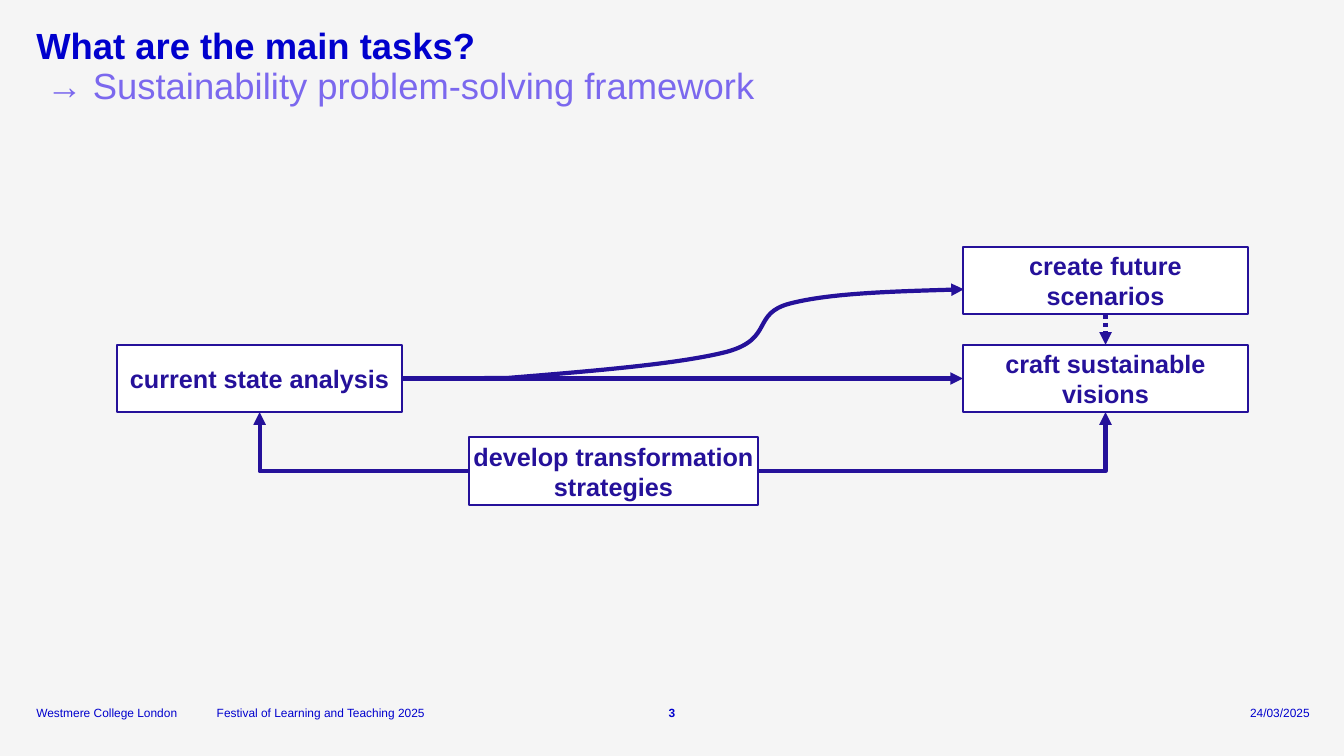
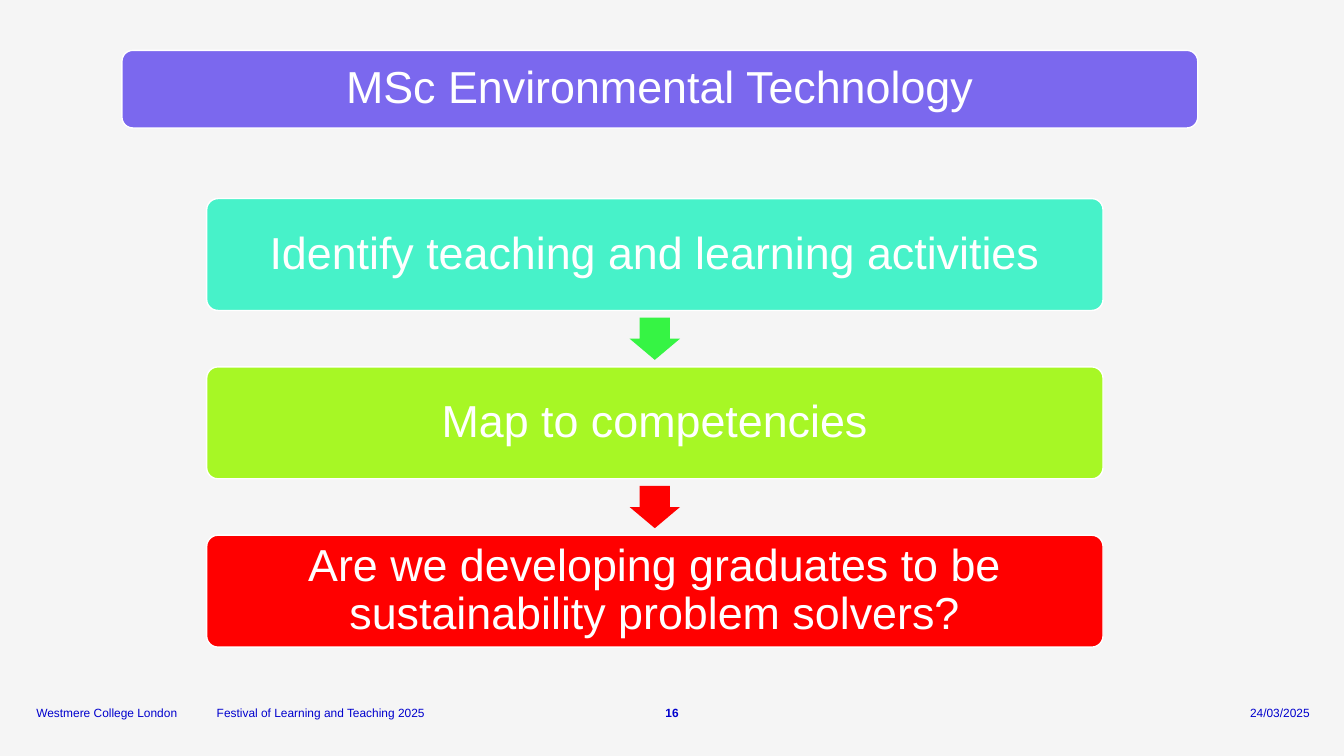
"""Build two slides on a sustainability problem-solving framework and a degree review."""
from dataclasses import dataclass
from typing import Optional

from lxml.etree import SubElement
from pptx import Presentation
from pptx.dml.color import RGBColor
from pptx.enum.dml import MSO_LINE
from pptx.enum.shapes import MSO_CONNECTOR, MSO_SHAPE
from pptx.enum.text import MSO_ANCHOR, PP_ALIGN
from pptx.oxml.ns import qn
from pptx.shapes.autoshape import Shape
from pptx.shapes.connector import Connector
from pptx.slide import Slide
from pptx.text.text import TextFrame
from pptx.util import Inches, Pt


@dataclass(frozen=True)
class Theme:
    font: str = "Arial"
    background: str = "F5F5F5"
    blue: str = "0000CD"
    violet: str = "7B68EE"
    indigo: str = "25119A"
    white: str = "FFFFFF"
    turquoise: str = "47F2C9"
    green: str = "36F444"
    lime: str = "A7F725"
    red: str = "FF0000"
    footer_size: float = 8.5
    title_size: float = 26
    task_size: float = 18
    step_size: float = 32
    task_border: float = 1.5
    step_border: float = 1
    flow_width: float = 3


@dataclass(frozen=True)
class Area:
    left: float
    top: float
    width: float
    height: float

    def lengths(self) -> tuple[int, int, int, int]:
        return Inches(self.left), Inches(self.top), Inches(self.width), Inches(self.height)


@dataclass(frozen=True)
class TextStyle:
    size: float
    color: str
    bold: bool = False
    align: PP_ALIGN = PP_ALIGN.LEFT
    anchor: MSO_ANCHOR = MSO_ANCHOR.TOP
    inset: float = 0
    line_spacing: float = 1


@dataclass(frozen=True)
class Task:
    key: str
    text: str
    area: Area


@dataclass(frozen=True)
class Step:
    text: str
    fill: str
    arrow_fill: Optional[str] = None


THEME = Theme()
TOP, LEFT, BOTTOM, RIGHT = range(4)

TASK_STYLE = TextStyle(THEME.task_size, THEME.indigo, True, PP_ALIGN.CENTER, MSO_ANCHOR.MIDDLE, 0.04)
STEP_STYLE = TextStyle(THEME.step_size, THEME.white, False, PP_ALIGN.CENTER, MSO_ANCHOR.MIDDLE, 0.17, 0.9)

TASKS = (
    Task("analysis", "current state analysis", Area(1.16, 3.42, 2.83, 0.67)),
    Task("scenarios", "create future scenarios", Area(9.55, 2.45, 2.83, 0.67)),
    Task("visions", "craft sustainable visions", Area(9.55, 3.42, 2.83, 0.67)),
    Task("strategies", "develop transformation strategies", Area(4.65, 4.34, 2.87, 0.67)),
)

BRANCH_START = (5.03, 3.75)
BRANCH_CURVES = (
    (5.89, 3.68), (6.74, 3.61), (7.21, 3.49),
    (7.68, 3.36), (7.45, 3.11), (7.84, 3.01),
    (8.23, 2.91), (8.89, 2.89), (9.56, 2.87),
)

STEPS = (
    Step("Identify teaching and learning activities", THEME.turquoise, THEME.green),
    Step("Map to competencies", THEME.lime, THEME.red),
    Step("Are we developing graduates to be sustainability problem solvers?", THEME.red),
)
FIRST_STEP = Area(2.05, 1.97, 8.89, 1.11)
STEP_PITCH = 1.67
ARROW_WIDTH, ARROW_HEIGHT = 0.5, 0.42


def rgb(color: str) -> RGBColor:
    return RGBColor.from_string(color)


def write(frame: TextFrame, text: str, style: TextStyle) -> None:
    frame.text = text
    frame.word_wrap = True
    frame.vertical_anchor = style.anchor
    frame.margin_left = frame.margin_right = Inches(style.inset)
    frame.margin_top = frame.margin_bottom = Inches(style.inset)
    paragraph = frame.paragraphs[0]
    paragraph.alignment = style.align
    paragraph.line_spacing = style.line_spacing
    for run in paragraph.runs:
        run.font.name = THEME.font
        run.font.size = Pt(style.size)
        run.font.bold = style.bold
        run.font.color.rgb = rgb(style.color)


def add_text(slide: Slide, area: Area, text: str, style: TextStyle) -> None:
    write(slide.shapes.add_textbox(*area.lengths()).text_frame, text, style)


def add_block(slide: Slide, kind: MSO_SHAPE, area: Area, fill: str,
              border: Optional[str] = None, border_width: float = 0) -> Shape:
    block = slide.shapes.add_shape(kind, *area.lengths())
    block.shadow.inherit = False
    block.fill.solid()
    block.fill.fore_color.rgb = rgb(fill)
    if border:
        block.line.color.rgb = rgb(border)
        block.line.width = Pt(border_width)
    else:
        block.line.fill.background()
    return block


def style_flow(flow: Connector | Shape, arrow: bool = True, dash: Optional[MSO_LINE] = None) -> None:
    flow.line.color.rgb = rgb(THEME.indigo)
    flow.line.width = Pt(THEME.flow_width)
    if dash:
        flow.line.dash_style = dash
    if arrow:
        SubElement(flow.line._get_or_add_ln(), qn("a:tailEnd"), type="triangle")


def add_flow(slide: Slide, start: Shape, start_site: int, end: Shape, end_site: int,
             bent: bool = False, dash: Optional[MSO_LINE] = None) -> None:
    kind = MSO_CONNECTOR.ELBOW if bent else MSO_CONNECTOR.STRAIGHT
    flow = slide.shapes.add_connector(kind, 0, 0, 0, 0)
    flow.begin_connect(start, start_site)
    flow.end_connect(end, end_site)
    properties = flow._element.spPr
    if bent:
        properties.find(qn("a:prstGeom")).set("prst", "bentConnector2")
    style_flow(flow, dash=dash)
    SubElement(properties, qn("a:effectLst"))


def add_branch(slide: Slide, origin: Shape) -> None:
    start = tuple(Inches(value) for value in BRANCH_START)
    stem = slide.shapes.add_connector(MSO_CONNECTOR.STRAIGHT, *start, *start)
    stem.begin_connect(origin, RIGHT)
    style_flow(stem, arrow=False)
    SubElement(stem._element.spPr, qn("a:effectLst"))

    builder = slide.shapes.build_freeform(*start)
    builder.add_line_segments([(Inches(x), Inches(y)) for x, y in BRANCH_CURVES], close=False)
    branch = builder.convert_to_shape()
    branch.shadow.inherit = False
    branch.fill.background()
    segments = list(branch._element.spPr.iter(qn("a:lnTo")))
    outline = segments[0].getparent()
    for first in range(0, len(segments), 3):
        curve = SubElement(outline, qn("a:cubicBezTo"))
        for segment in segments[first:first + 3]:
            curve.append(segment[0])
            outline.remove(segment)
    style_flow(branch)


def add_footer(slide: Slide, number: int) -> None:
    entries = (
        (0.36, 1.55, "Westmere College London", PP_ALIGN.LEFT, False),
        (2.15, 3.74, "Festival of Learning and Teaching 2025", PP_ALIGN.LEFT, False),
        (6.49, 0.35, str(number), PP_ALIGN.CENTER, True),
        (11.64, 1.35, "24/03/2025", PP_ALIGN.RIGHT, False),
    )
    for left, width, text, align, bold in entries:
        style = TextStyle(THEME.footer_size, THEME.blue, bold, align, MSO_ANCHOR.BOTTOM)
        add_text(slide, Area(left, 6.99, width, 0.15), text, style)


def add_title(slide: Slide, title: str, subtitle: str) -> None:
    for top, text, color, bold in ((0.28, title, THEME.blue, True), (0.68, subtitle, THEME.violet, False)):
        style = TextStyle(THEME.title_size, color, bold, line_spacing=0.9)
        add_text(slide, Area(0.36, top, 12.62, 0.41), text, style)


def new_slide(deck: Presentation, number: int) -> Slide:
    slide = deck.slides.add_slide(deck.slide_layouts[6])
    slide.background.fill.solid()
    slide.background.fill.fore_color.rgb = rgb(THEME.background)
    add_footer(slide, number)
    return slide


def build_framework(deck: Presentation) -> None:
    slide = new_slide(deck, 3)
    add_title(slide, "What are the main tasks?", " → Sustainability problem-solving framework")
    boxes: dict[str, Shape] = {}
    for task in TASKS:
        box = add_block(slide, MSO_SHAPE.RECTANGLE, task.area, THEME.white, THEME.indigo, THEME.task_border)
        write(box.text_frame, task.text, TASK_STYLE)
        boxes[task.key] = box
    add_flow(slide, boxes["analysis"], RIGHT, boxes["visions"], LEFT)
    add_branch(slide, boxes["analysis"])
    add_flow(slide, boxes["strategies"], LEFT, boxes["analysis"], BOTTOM, bent=True)
    add_flow(slide, boxes["strategies"], RIGHT, boxes["visions"], BOTTOM, bent=True)
    add_flow(slide, boxes["scenarios"], BOTTOM, boxes["visions"], TOP, dash=MSO_LINE.ROUND_DOT)


def add_step(slide: Slide, area: Area, text: str, fill: str, corner: float = 0.1) -> None:
    step = add_block(slide, MSO_SHAPE.ROUNDED_RECTANGLE, area, fill, THEME.white, THEME.step_border)
    step.adjustments[0] = corner
    write(step.text_frame, text, STEP_STYLE)


def build_review(deck: Presentation) -> None:
    slide = new_slide(deck, 16)
    add_step(slide, Area(1.21, 0.5, 10.67, 0.77), "MSc Environmental Technology", THEME.violet, 0.14)
    arrow_left = FIRST_STEP.left + (FIRST_STEP.width - ARROW_WIDTH) / 2
    arrow_gap = (STEP_PITCH - FIRST_STEP.height - ARROW_HEIGHT) / 2
    for index, step in enumerate(STEPS):
        top = FIRST_STEP.top + index * STEP_PITCH
        add_step(slide, Area(FIRST_STEP.left, top, FIRST_STEP.width, FIRST_STEP.height), step.text, step.fill)
        if step.arrow_fill:
            arrow_top = top + FIRST_STEP.height + arrow_gap
            arrow_area = Area(arrow_left, arrow_top, ARROW_WIDTH, ARROW_HEIGHT)
            arrow = add_block(slide, MSO_SHAPE.DOWN_ARROW, arrow_area, step.arrow_fill)
            arrow.adjustments[0] = 0.6
            arrow.adjustments[1] = 0.5


def main() -> None:
    deck = Presentation()
    deck.slide_width = Inches(13.33)
    deck.slide_height = Inches(7.5)
    build_framework(deck)
    build_review(deck)
    deck.save("out.pptx")


if __name__ == "__main__":
    main()
